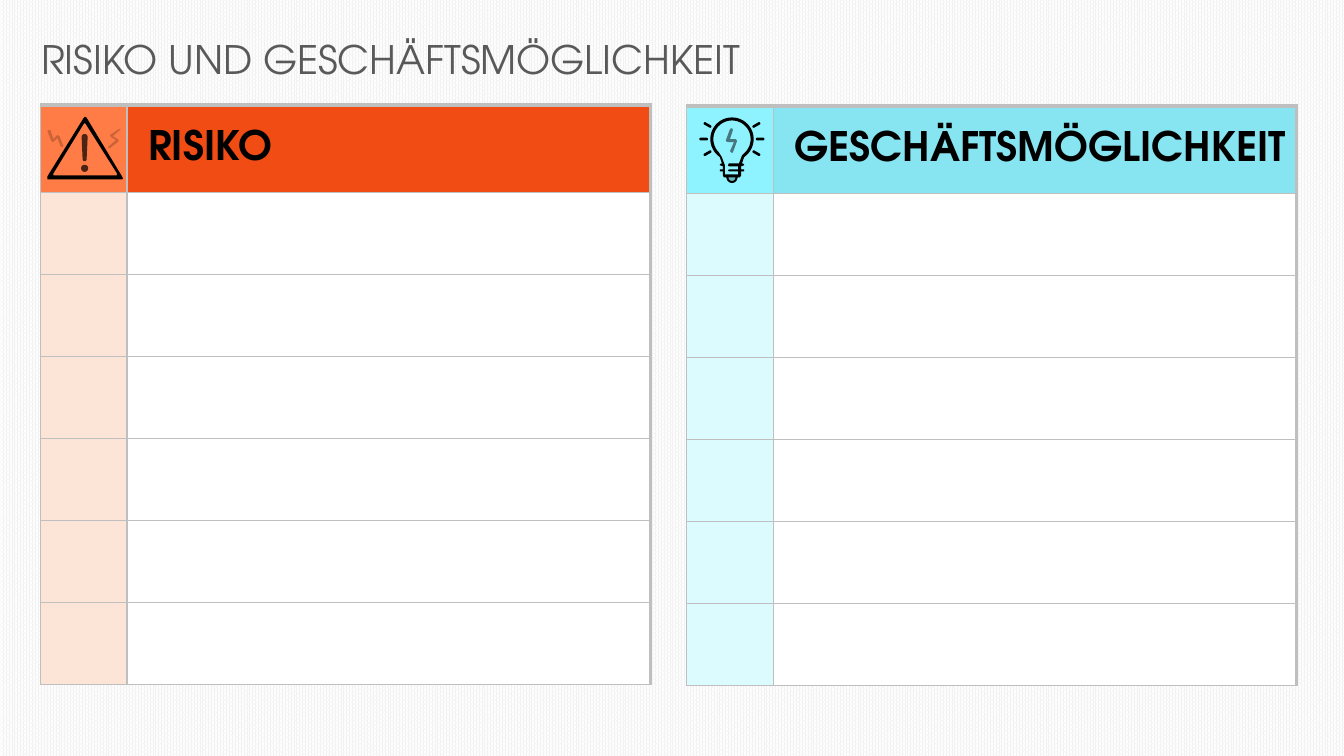
import math
from dataclasses import dataclass

from lxml import etree
from pptx import Presentation
from pptx.dml.color import RGBColor
from pptx.enum.dml import MSO_PATTERN
from pptx.enum.text import MSO_ANCHOR, MSO_AUTO_SIZE
from pptx.oxml.ns import qn
from pptx.util import Inches, Pt

DOTTED = MSO_PATTERN.PERCENT_80
MIDDLE = MSO_ANCHOR.MIDDLE
GROW = MSO_AUTO_SIZE.SHAPE_TO_FIT_TEXT

FONT = "TeX Gyre Adventor"
BLACK, WHITE, GRAY, GRID = "000000", "FFFFFF", "595959", "BFBFBF"
PANEL_WIDTH, PANEL_HEIGHT = 6.05, 5.75
MARK_WIDTH, HEADER_HEIGHT, ENTRY_COUNT = 0.86, 0.87, 6

Point = tuple[float, float]
Contour = list[Point]


@dataclass(frozen=True)
class Panel:
    heading: str
    left: float
    top: float
    icon_fill: str
    header_fill: str
    mark_fill: str


@dataclass(frozen=True)
class IconPart:
    """Contours in slide inches; inner contours cut holes."""
    contours: list[Contour]
    opacity: int = 100


def color(value: str) -> RGBColor:
    return RGBColor.from_string(value)


def style_font(font, size: float, value: str, bold: bool = False) -> None:
    font.name, font.size, font.bold = FONT, Pt(size), bold
    font.color.rgb = color(value)


def add_title(slide, text: str) -> None:
    box = slide.shapes.add_textbox(Inches(0.31), Inches(0.3), Inches(8.66), Inches(0.57))
    frame = box.text_frame
    frame.word_wrap = True
    frame.auto_size = GROW
    frame.text = text
    style_font(frame.paragraphs[0].font, 28, GRAY)


def set_borders(cell, widths: dict[str, float]) -> None:
    """Draw the cell's edges; they must precede its fill in the XML."""
    properties = cell._tc.get_or_add_tcPr()
    for index, (edge, width) in enumerate(widths.items()):
        line = etree.Element(qn(f"a:ln{edge}"), w=str(Pt(width)))
        solid = etree.SubElement(line, qn("a:solidFill"))
        etree.SubElement(solid, qn("a:srgbClr"), val=GRID)
        properties.insert(index, line)


def add_panel(slide, panel: Panel) -> None:
    table = slide.shapes.add_table(
        ENTRY_COUNT + 1, 2, Inches(panel.left), Inches(panel.top),
        Inches(PANEL_WIDTH), Inches(PANEL_HEIGHT)).table
    table.columns[0].width = Inches(MARK_WIDTH)
    table.columns[1].width = Inches(PANEL_WIDTH - MARK_WIDTH)
    for index, row in enumerate(table.rows):
        is_header = index == 0
        row.height = Inches(HEADER_HEIGHT if is_header
                            else (PANEL_HEIGHT - HEADER_HEIGHT) / ENTRY_COUNT)
        fills = ((panel.icon_fill, panel.header_fill) if is_header
                 else (panel.mark_fill, WHITE))
        for cell, fill, right_width in zip(row.cells, fills, (1, 2.25)):
            cell.fill.solid()
            cell.fill.fore_color.rgb = color(fill)
            top_width = 3 if is_header else 1
            set_borders(cell, {"L": 1, "R": right_width, "T": top_width, "B": 1})

    heading = table.cell(0, 1)
    heading.text = panel.heading
    heading.vertical_anchor = MIDDLE
    heading.margin_left = Inches(0.21)
    heading.margin_top = heading.margin_right = Inches(0.01)
    heading.margin_bottom = 0
    style_font(heading.text_frame.paragraphs[0].font, 29, BLACK, bold=True)


def add_icon_part(slide, part: IconPart) -> None:
    first, *holes = [[(Inches(x), Inches(y)) for x, y in contour]
                     for contour in part.contours]
    builder = slide.shapes.build_freeform(*first[0])
    builder.add_line_segments(first[1:], close=True)
    for hole in holes:
        builder.move_to(*hole[0])
        builder.add_line_segments(hole[1:], close=True)
    shape = builder.convert_to_shape()
    shape.shadow.inherit = False
    shape.line.fill.background()
    shape.fill.solid()
    shape.fill.fore_color.rgb = color(BLACK)
    if part.opacity < 100:
        fill_color = shape._element.spPr.find(f".//{qn('a:srgbClr')}")
        etree.SubElement(fill_color, qn("a:alpha"), val=str(part.opacity * 1000))


def arc(x: float, y: float, radius: float, start: float, end: float) -> Contour:
    """Points clockwise on screen, angles in degrees from the right."""
    steps = max(8, round((end - start) / 8))
    angles = [math.radians(start + (end - start) * i / steps) for i in range(steps + 1)]
    return [(x + radius * math.cos(a), y + radius * math.sin(a)) for a in angles]


def capsule(start: Point, end: Point, radius: float) -> Contour:
    """Outline of a straight stroke with round ends."""
    angle = math.degrees(math.atan2(end[1] - start[1], end[0] - start[0]))
    return (arc(*end, radius, angle - 90, angle + 90)
            + arc(*start, radius, angle + 90, angle + 270))


def warning_icon() -> list[IconPart]:
    left_bolt = [(0.62, 1.46), (0.6, 1.45), (0.57, 1.37), (0.53, 1.41), (0.51, 1.4),
                 (0.47, 1.3), (0.48, 1.29), (0.5, 1.29), (0.53, 1.38), (0.57, 1.34),
                 (0.59, 1.35), (0.63, 1.45)]
    right_bolt = [(1.08, 1.47), (1.07, 1.46), (1.08, 1.45), (1.15, 1.39), (1.1, 1.36),
                  (1.09, 1.34), (1.18, 1.28), (1.2, 1.28), (1.19, 1.29), (1.12, 1.35),
                  (1.17, 1.38), (1.18, 1.4), (1.09, 1.47)]
    triangle = [(1.21, 1.75), (0.86, 1.17), (0.85, 1.16), (0.84, 1.16), (0.83, 1.17),
                (0.47, 1.75), (0.47, 1.78), (1.21, 1.78), (1.22, 1.77)]
    inside = [(1.16, 1.74), (0.53, 1.74), (0.53, 1.72), (0.83, 1.23), (0.84, 1.22),
              (0.85, 1.23), (1.16, 1.72)]
    stroke = arc(0.84, 1.36, 0.03, 180, 360) + arc(0.84, 1.58, 0.02, 0, 180)
    dot = arc(0.84, 1.67, 0.035, 0, 360)
    return [IconPart([left_bolt], 20), IconPart([right_bolt], 20),
            IconPart([triangle, inside]), IconPart([stroke], 70), IconPart([dot], 70)]


def bulb_icon() -> list[IconPart]:
    x, y = 7.26, 1.38
    socket = [(7.38, 1.56), (7.36, 1.62), (7.38, 1.63), (7.38, 1.64), (7.35, 1.65),
              (7.35, 1.68), (7.38, 1.68), (7.38, 1.7), (7.35, 1.7), (7.35, 1.74),
              (7.34, 1.76), (7.32, 1.76)]
    mirrored = [(2 * x - px, py) for px, py in reversed(socket)]
    outline = arc(x, y, 0.215, 135, 405) + socket + arc(x, 1.76, 0.055, 0, 180) + mirrored
    glass = arc(x, y, 0.185, 135, 405) + [
        (7.36, 1.54), (7.33, 1.62), (7.23, 1.62), (7.22, 1.64), (7.23, 1.65),
        (7.32, 1.65), (7.32, 1.68), (7.23, 1.68), (7.22, 1.69), (7.23, 1.7),
        (7.32, 1.7), (7.32, 1.73), (7.19, 1.73), (7.19, 1.64), (7.16, 1.56)]
    bolt = [(7.26, 1.52), (7.24, 1.5), (7.28, 1.41), (7.22, 1.41), (7.2, 1.4),
            (7.2, 1.39), (7.24, 1.28), (7.26, 1.27), (7.27, 1.29), (7.24, 1.38),
            (7.3, 1.38), (7.31, 1.4), (7.27, 1.51)]
    rays = []
    for angle in (0, 180, -30, 150, -150, 30):
        dx, dy = math.cos(math.radians(angle)), math.sin(math.radians(angle))
        near, far = [(x + r * dx, y + r * dy) for r in (0.25, 0.31)]
        rays.append(IconPart([capsule(near, far, 0.013)]))
    return [IconPart([arc(x, 1.74, 0.055, 0, 180)], 24),
            IconPart([outline, glass, arc(x, 1.76, 0.035, 0, 180)]),
            *rays, IconPart([bolt], 50)]


PANELS = [
    Panel("RISIKO", 0.4, 1.04, "FF7C46", "F04C13", "FCE4D6"),
    Panel("GESCHÄFTSMÖGLICHKEIT", 6.81, 1.05, "8EF3FF", "86E5F1", "DCFBFF"),
]


def main() -> None:
    deck = Presentation()
    deck.slide_width, deck.slide_height = Inches(13.33), Inches(7.5)
    slide = deck.slides.add_slide(deck.slide_layouts[6])
    backdrop = slide.background.fill
    backdrop.patterned()
    backdrop.pattern = DOTTED
    backdrop.fore_color.rgb = color("F2F2F2")
    backdrop.back_color.rgb = color(WHITE)

    add_title(slide, "RISIKO UND GESCHÄFTSMÖGLICHKEIT")
    for panel in PANELS:
        add_panel(slide, panel)
    for part in warning_icon() + bulb_icon():
        add_icon_part(slide, part)
    deck.save("out.pptx")


if __name__ == "__main__":
    main()
